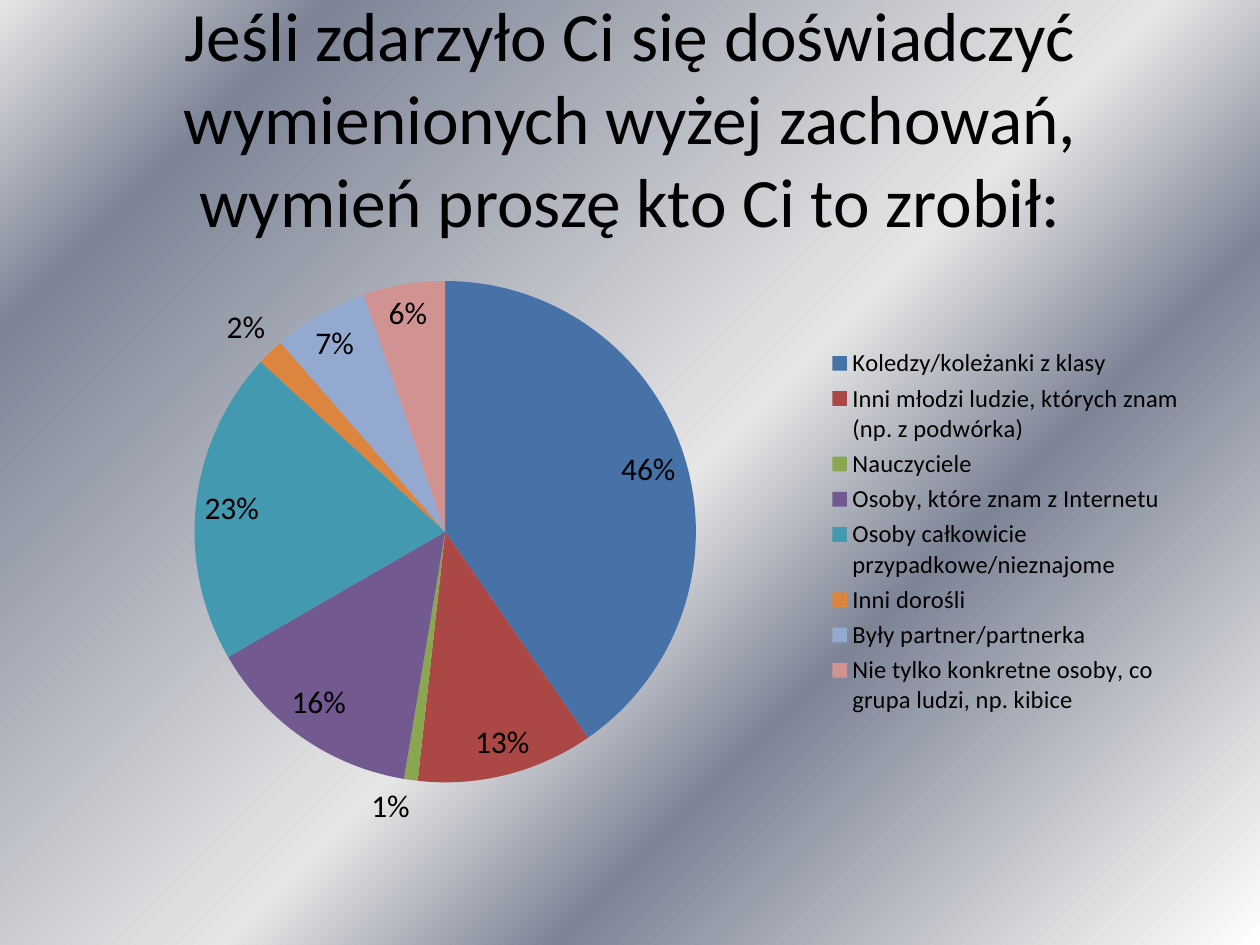
from dataclasses import dataclass
from typing import NamedTuple

from lxml.etree import SubElement
from pptx import Presentation
from pptx.chart.data import CategoryChartData
from pptx.dml.color import RGBColor
from pptx.enum.chart import XL_CHART_TYPE, XL_LABEL_POSITION, XL_LEGEND_POSITION
from pptx.enum.text import MSO_ANCHOR, MSO_AUTO_SIZE, PP_ALIGN
from pptx.oxml.ns import qn
from pptx.util import Emu, Pt

PX_PER_INCH = 126


def px(length: int) -> Emu:
    return Emu(round(length * 914400 / PX_PER_INCH))


@dataclass(frozen=True)
class Theme:
    font: str = "Calibri"
    text: str = "000000"
    title_size: float = 39.6
    label_size: float = 18
    legend_size: float = 14
    gradient_angle: int = 135  # counter-clockwise
    gradient: tuple = ((0, "FFFFFF"), (7, "E6E6E6"), (32, "7D8496"),
                       (47, "E6E6E6"), (85, "7D8496"), (100, "E6E6E6"))


class Box(NamedTuple):
    left: int
    top: int
    width: int
    height: int

    def emu(self) -> tuple:
        return tuple(px(side) for side in self)


class Answer(NamedTuple):
    name: str
    share: float
    color: str


THEME = Theme()
TITLE_BOX = Box(63, 38, 1134, 158)
CHART_BOX = Box(63, 220, 1134, 624)
TITLE = ("Jeśli zdarzyło Ci się doświadczyć wymienionych wyżej zachowań, "
         "wymień proszę kto Ci to zrobił:")
ANSWERS = [
    Answer("Koledzy/koleżanki z klasy", 0.46, "4672A8"),
    Answer("Inni młodzi ludzie, których znam (np. z podwórka)", 0.13, "AB4744"),
    Answer("Nauczyciele", 0.01, "8AA64F"),
    Answer("Osoby, które znam z Internetu", 0.16, "725990"),
    Answer("Osoby całkowicie przypadkowe/nieznajome", 0.23, "4299B0"),
    Answer("Inni dorośli", 0.02, "DC853E"),
    Answer("Były partner/partnerka", 0.07, "93A9CF"),
    Answer("Nie tylko konkretne osoby, co grupa ludzi, np. kibice", 0.06, "D19392"),
]


def style_font(font, size: float) -> None:
    font.name = THEME.font
    font.size = Pt(size)
    font.color.rgb = RGBColor.from_string(THEME.text)


def paint_background(slide) -> None:
    fill = slide.background.fill
    fill.gradient()
    fill.gradient_angle = THEME.gradient_angle
    stops = slide.element.find(".//" + qn("a:gsLst"))
    for stop in list(stops):
        stops.remove(stop)
    for percent, color in THEME.gradient:
        stop = SubElement(stops, qn("a:gs"), pos=str(percent * 1000))
        SubElement(stop, qn("a:srgbClr"), val=color)


def write_title(slide) -> None:
    title = slide.shapes.title
    title.left, title.top, title.width, title.height = TITLE_BOX.emu()
    frame = title.text_frame
    frame.text = TITLE
    frame.word_wrap = True
    frame.auto_size = MSO_AUTO_SIZE.NONE
    frame.vertical_anchor = MSO_ANCHOR.MIDDLE
    para = frame.paragraphs[0]
    para.alignment = PP_ALIGN.CENTER
    style_font(para.font, THEME.title_size)


def add_pie(slide, answers: list[Answer]) -> None:
    data = CategoryChartData(number_format="0%")
    data.categories = [answer.name for answer in answers]
    data.add_series("Series 1", [answer.share for answer in answers])
    chart = slide.shapes.add_chart(XL_CHART_TYPE.PIE, *CHART_BOX.emu(), data).chart
    chart.has_title = False
    style_font(chart.font, THEME.label_size)

    # Legend
    chart.has_legend = True
    chart.legend.position = XL_LEGEND_POSITION.RIGHT
    chart.legend.include_in_layout = False
    style_font(chart.legend.font, THEME.legend_size)

    # Slices
    plot = chart.plots[0]
    plot.vary_by_categories = True
    for index, answer in enumerate(answers):
        fill = plot.series[0].points[index].format.fill
        fill.solid()
        fill.fore_color.rgb = RGBColor.from_string(answer.color)

    # Value labels
    plot.has_data_labels = True
    labels = plot.data_labels
    labels.show_value = True
    labels.show_percentage = False
    labels.number_format = "0%"
    labels.number_format_is_linked = False
    labels.position = XL_LABEL_POSITION.BEST_FIT
    style_font(labels.font, THEME.label_size)


def main() -> None:
    deck = Presentation()
    deck.slide_width, deck.slide_height = px(1260), px(945)
    page = deck.slides.add_slide(deck.slide_layouts[5])
    paint_background(page)
    write_title(page)
    add_pie(page, ANSWERS)
    deck.save("out.pptx")


if __name__ == "__main__":
    main()
